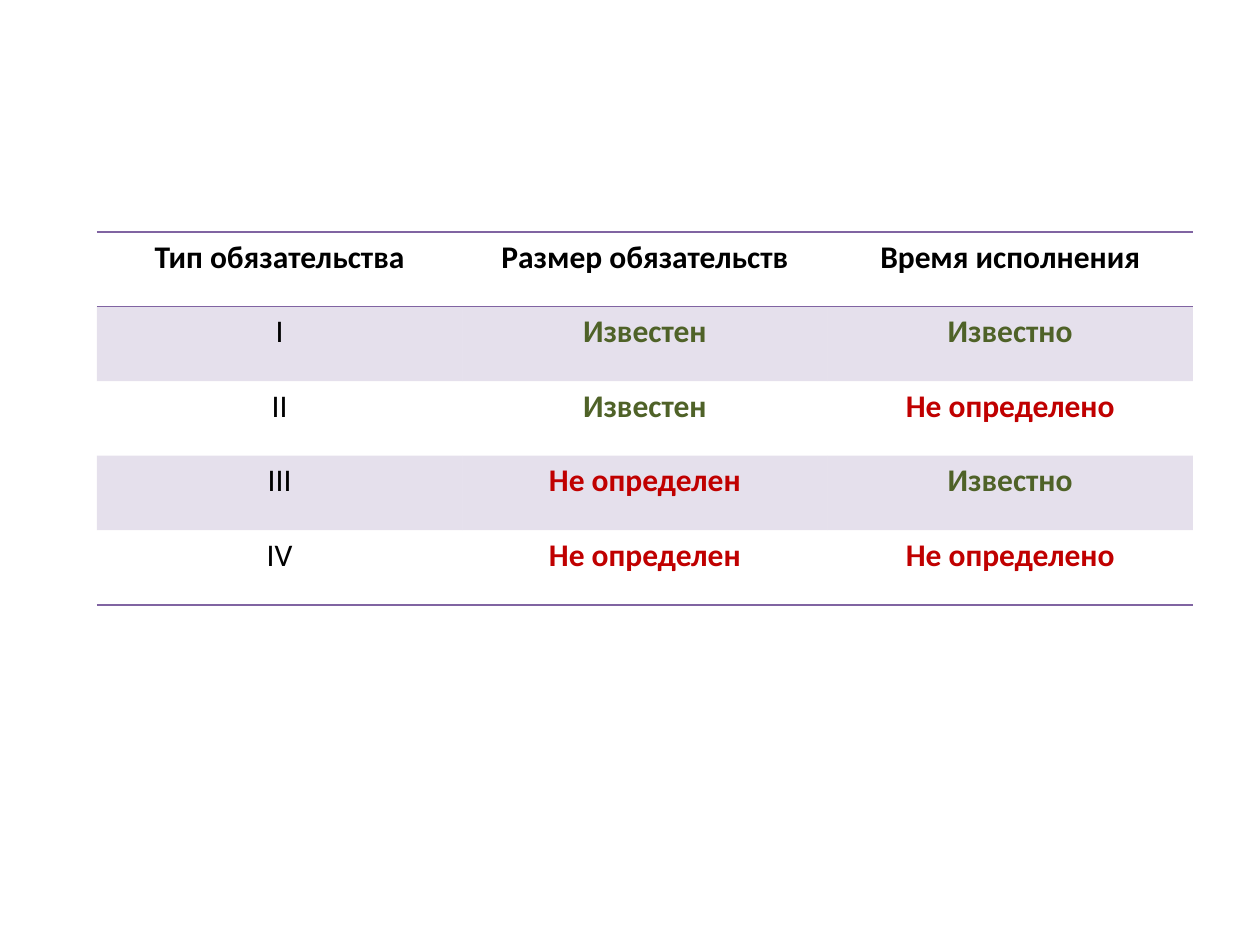
"""Build a slide with a table of obligation types."""
from dataclasses import dataclass

from lxml.etree import SubElement as Sub
from pptx import Presentation
from pptx.dml.color import RGBColor as RGB
from pptx.enum.text import PP_ALIGN as Align
from pptx.oxml.ns import qn
from pptx.util import Emu, Pt


@dataclass(frozen=True)
class Theme:
    font: str = "Calibri"
    size: int = 18
    ink: str = "000000"
    known: str = "4F6228"
    open: str = "C00000"
    rule: str = "8064A2"
    paper: str = "FFFFFF"
    tint: int = 20
    line: int = 1


def px(num):
    return Emu(num * 914400 // 126)


class Deck:
    def __init__(self, theme):
        self.theme = theme
        self.file = Presentation()
        self.file.slide_width, self.file.slide_height = px(1260), px(945)
        self.slide = self.file.slides.add_slide(self.file.slide_layouts[6])

    def table(self, rows, left, top, width, height, rules):
        frame = self.slide.shapes.add_table(
            len(rows), len(rows[0]), px(left), px(top), px(width), px(height))
        grid = frame.table
        for row, words in enumerate(rows):
            for col, word in enumerate(words):
                cell = grid.cell(row, col)
                self.edges(cell, row in rules, row + 1 in rules)
                self.fill(cell, row % 2 == 1)
                self.text(cell, word, row == 0 or col > 0)

    def edges(self, cell, top, bottom):
        props = cell._tc.get_or_add_tcPr()
        for side, shown in (("L", False), ("R", False), ("T", top), ("B", bottom)):
            line = Sub(props, qn(f"a:ln{side}"), w=str(Pt(self.theme.line)))
            if shown:
                fill = Sub(line, qn("a:solidFill"))
                Sub(fill, qn("a:srgbClr"), val=self.theme.rule)
            else:
                Sub(line, qn("a:noFill"))

    def fill(self, cell, band):
        if not band:
            cell.fill.background()
            return
        cell.fill.solid()
        cell.fill.fore_color.rgb = RGB.from_string(self.theme.rule)
        color = cell._tc.tcPr.find(f"{qn('a:solidFill')}/{qn('a:srgbClr')}")
        Sub(color, qn("a:alpha"), val=str(self.theme.tint * 1000))

    def text(self, cell, word, bold):
        cell.text_frame.text = word
        para = cell.text_frame.paragraphs[0]
        para.alignment = Align.CENTER
        font = para.runs[0].font
        font.name, font.size, font.bold = self.theme.font, Pt(self.theme.size), bold
        font.color.rgb = RGB.from_string(self.color(word))

    def color(self, word):
        if word.startswith("Извест"):
            return self.theme.known
        if word.startswith("Не "):
            return self.theme.open
        return self.theme.ink

    def save(self):
        self.file.save("out.pptx")


ROWS = [
    ("Тип обязательства", "Размер обязательств", "Время исполнения"),
    ("I", "Известен", "Известно"),
    ("II", "Известен", "Не определено"),
    ("III", "Не определен", "Известно"),
    ("IV", "Не определен", "Не определено"),
]


def main():
    deck = Deck(Theme())
    deck.table(ROWS, 97, 232, 1096, 373, rules=(0, 1, len(ROWS)))
    deck.save()


if __name__ == "__main__":
    main()
